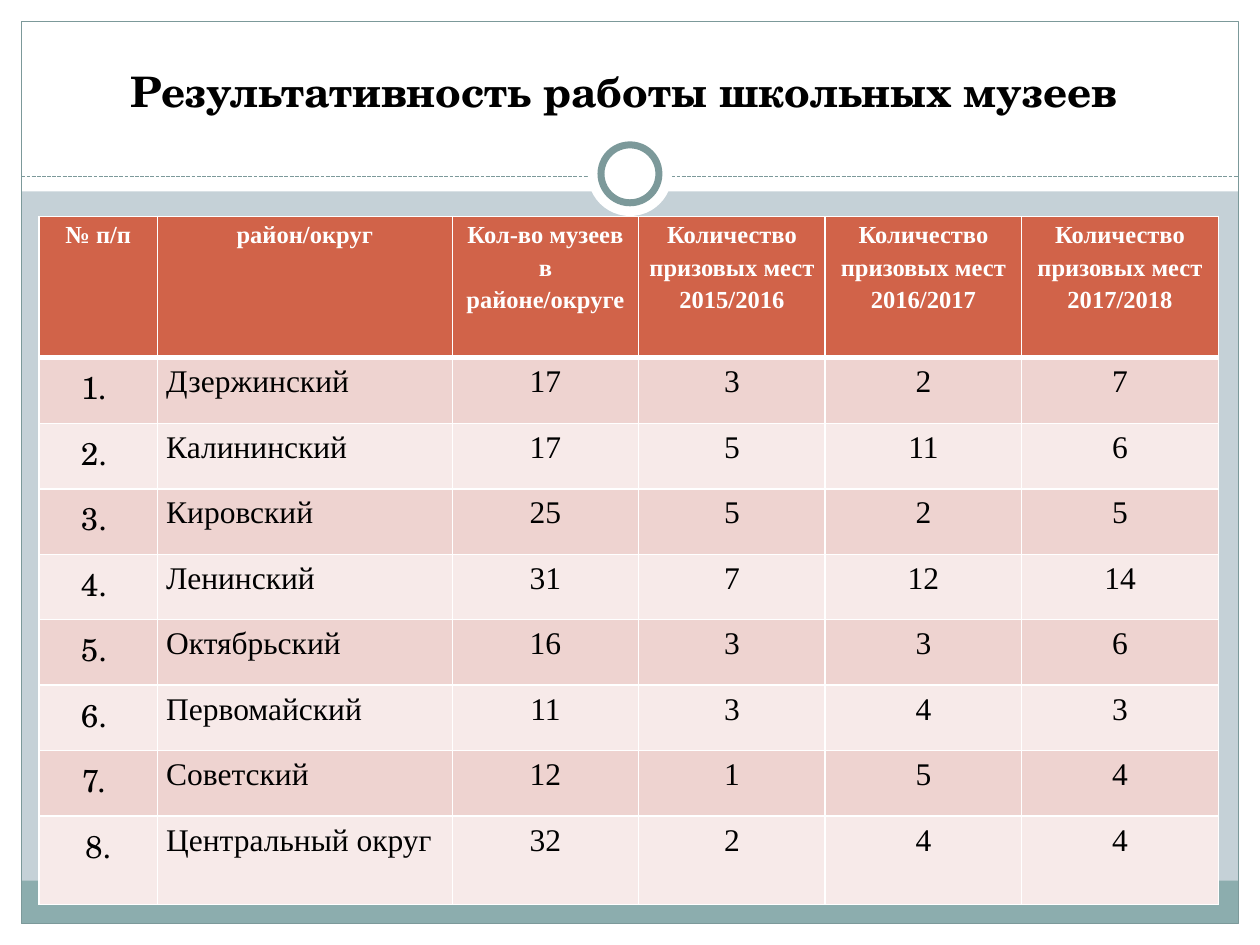
import pptx
import pptx.util
import pptx.dml.color
import pptx.enum.dml
import pptx.enum.shapes
import pptx.enum.text
import pptx.oxml.ns
from lxml import etree

WIDTH, HEIGHT = 10, 7.5
MARGIN = 0.17
HEADER_HEIGHT = 1.52
DIVIDER_Y = 1.4
RING_CENTRE = (5, 1.38)

WHITE, BLACK, TEAL = "FFFFFF", "000000", "7C999A"
BACKDROP, FOOTER = "C5D1D7", "8CADAE"
HEADING_FILL, BANDS = "D16349", ("EED3D0", "F7EAE9")
SERIF, SCHOOL = "Times New Roman", "TeX Gyre Schola"

COLUMN_WIDTHS = [0.94, 2.34, 1.48, 1.48, 1.56, 1.56]
PRIZES = "Количество призовых мест"
HEADINGS = [["№ п/п"], ["район/округ"], ["Кол-во музеев в районе/округе"]] + [
    [PRIZES, years] for years in ("2015/2016", "2016/2017", "2017/2018")]
DISTRICTS = [
    ("Дзержинский", 17, 3, 2, 7),
    ("Калининский", 17, 5, 11, 6),
    ("Кировский", 25, 5, 2, 5),
    ("Ленинский", 31, 7, 12, 14),
    ("Октябрьский", 16, 3, 3, 6),
    ("Первомайский", 11, 3, 4, 3),
    ("Советский", 12, 1, 5, 4),
    ("Центральный округ", 32, 2, 4, 4),
]
ROW_HEIGHTS = [1.12] + [0.52] * (len(DISTRICTS) - 1) + [0.7]

SHAPE = pptx.enum.shapes.MSO_SHAPE
ALIGN = pptx.enum.text.PP_ALIGN
inch = pptx.util.Inches


def colour(hex_code):
    return pptx.dml.color.RGBColor.from_string(hex_code)


def paint(fill, hex_code):
    fill.solid()
    fill.fore_color.rgb = colour(hex_code)


def add_figure(slide, kind, box, fill=None, line=None, line_width=0.75):
    figure = slide.shapes.add_shape(kind, *map(inch, box))
    figure.shadow.inherit = False
    if fill:
        paint(figure.fill, fill)
    else:
        figure.fill.background()
    if line:
        figure.line.color.rgb = colour(line)
        figure.line.width = pptx.util.Pt(line_width)
    else:
        figure.line.fill.background()


def add_disc(slide, diameter, **style):
    x, y = RING_CENTRE
    box = (x - diameter / 2, y - diameter / 2, diameter, diameter)
    add_figure(slide, SHAPE.OVAL, box, WHITE, **style)


def add_divider(slide):
    divider = slide.shapes.add_connector(
        pptx.enum.shapes.MSO_CONNECTOR.STRAIGHT, inch(MARGIN), inch(DIVIDER_Y),
        inch(WIDTH - MARGIN), inch(DIVIDER_Y))
    divider.line.color.rgb = colour(TEAL)
    divider.line.width = pptx.util.Pt(0.75)
    divider.line.dash_style = pptx.enum.dml.MSO_LINE.SQUARE_DOT
    properties = divider.element.spPr
    etree.SubElement(properties, pptx.oxml.ns.qn("a:effectLst"))


def write(paragraph, text, size, font, hex_code=BLACK, bold=False):
    run = paragraph.add_run()
    run.text = text
    run.font.size = pptx.util.Pt(size)
    run.font.name = font
    run.font.bold = bold
    run.font.color.rgb = colour(hex_code)


def add_title(slide, text):
    title = slide.shapes.add_textbox(inch(0.94), inch(0.47), inch(8.2), inch(0.5))
    title.text_frame.word_wrap = True
    title.text_frame.auto_size = pptx.enum.text.MSO_AUTO_SIZE.SHAPE_TO_FIT_TEXT
    write(title.text_frame.paragraphs[0], text, 24, SCHOOL, bold=True)


def border(cell, **widths):
    """Give the cell white borders; the sides are L, R, T and B, in points."""
    qn = pptx.oxml.ns.qn
    properties = cell._tc.get_or_add_tcPr()
    for side in "LRTB":
        edge = etree.SubElement(properties, qn("a:ln" + side),
                                w=str(pptx.util.Pt(widths.get(side, 1))))
        solid = etree.SubElement(edge, qn("a:solidFill"))
        etree.SubElement(solid, qn("a:srgbClr"), val=WHITE)


def fill_cell(cell, lines, fill, align=ALIGN.CENTER, tight=True, edges=None, **font):
    border(cell, **(edges or {}))
    paint(cell.fill, fill)
    if tight:
        cell.margin_left = cell.margin_right = inch(0.07)
        cell.margin_top = cell.margin_bottom = 0
    frame = cell.text_frame
    for index, line in enumerate(lines):
        paragraph = frame.add_paragraph() if index else frame.paragraphs[0]
        paragraph.alignment = align
        if tight:
            paragraph.line_spacing = 1.2
        write(paragraph, line, **font)


def add_results(slide):
    results = slide.shapes.add_table(
        len(ROW_HEIGHTS), len(COLUMN_WIDTHS), inch(0.31), inch(1.72),
        inch(sum(COLUMN_WIDTHS)), inch(sum(ROW_HEIGHTS))).table
    for column, width in zip(results.columns, COLUMN_WIDTHS):
        column.width = inch(width)
    for row, height in zip(results.rows, ROW_HEIGHTS):
        row.height = inch(height)

    # Heading row
    for index, lines in enumerate(HEADINGS):
        fill_cell(results.cell(0, index), lines, HEADING_FILL, edges={"B": 3},
                  size=14, font=SERIF, hex_code=WHITE, bold=True)

    # One banded row per district
    for number, (district, *counts) in enumerate(DISTRICTS, 1):
        band = BANDS[(number - 1) % 2]
        edges = {"T": 3} if number == 1 else {}
        ending = "." if number == len(DISTRICTS) else ". "
        fill_cell(results.cell(number, 0), [f"{number}{ending}"], band,
                  tight=False, edges=edges, size=18, font=SCHOOL)
        fill_cell(results.cell(number, 1), [district], band, ALIGN.JUSTIFY,
                  edges=edges, size=18, font=SERIF)
        for index, count in enumerate(counts, 2):
            fill_cell(results.cell(number, index), [str(count)], band,
                      edges=edges, size=18, font=SERIF)


def main():
    deck = pptx.Presentation()
    deck.slide_width, deck.slide_height = inch(WIDTH), inch(HEIGHT)
    slide = deck.slides.add_slide(deck.slide_layouts[6])
    paint(slide.background.fill, BACKDROP)

    # White margins and header band
    for box in [(0, HEIGHT - MARGIN, WIDTH, MARGIN),
                (0, 0, WIDTH, HEADER_HEIGHT),
                (0, 0, MARGIN, HEIGHT),
                (WIDTH - MARGIN, 0, MARGIN, HEIGHT)]:
        add_figure(slide, SHAPE.RECTANGLE, box, WHITE)

    # Footer band, frame, divider and ring
    inner_width = WIDTH - 2 * MARGIN
    add_figure(slide, SHAPE.RECTANGLE, (MARGIN, 6.99, inner_width, 0.34), FOOTER)
    add_figure(slide, SHAPE.RECTANGLE,
               (MARGIN, MARGIN, inner_width, HEIGHT - 2 * MARGIN), line=TEAL)
    add_divider(slide)
    add_disc(slide, 0.67)
    add_disc(slide, 0.46, line=TEAL, line_width=4)

    # Content
    add_results(slide)
    add_title(slide, "Результативность работы школьных музеев")
    deck.save("out.pptx")


if __name__ == "__main__":
    main()
